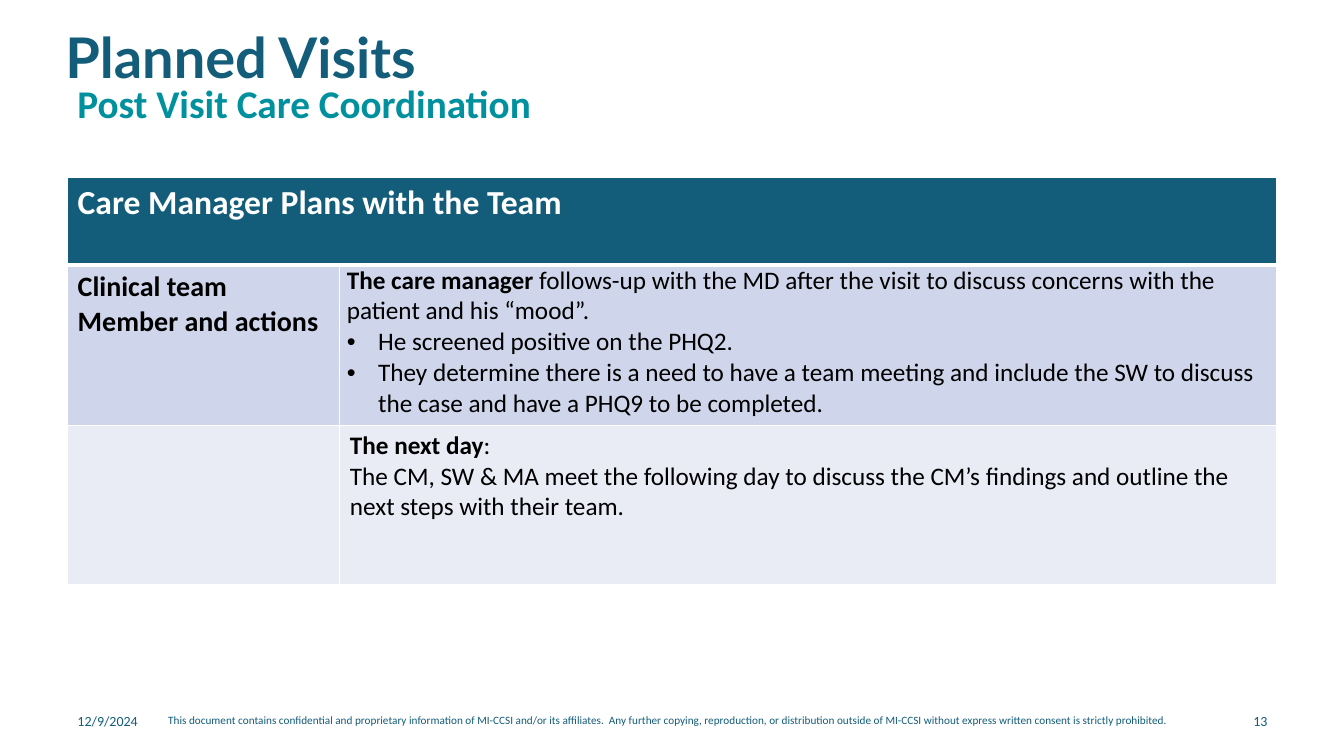
from dataclasses import dataclass

from lxml.etree import SubElement
from pptx import Presentation
from pptx.dml.color import RGBColor
from pptx.enum.text import MSO_ANCHOR, PP_ALIGN
from pptx.oxml.ns import qn
from pptx.slide import Slide
from pptx.table import _Cell
from pptx.text.text import TextFrame, _Paragraph
from pptx.util import Inches, Pt

NAVY, TEAL, WHITE, BLACK = "135D7A", "00909E", "FFFFFF", "000000"
BAND_DARK, BAND_LIGHT = "CFD5EA", "E9EBF5"
WIDTH, HEIGHT = Inches(13.33), Inches(7.5)


@dataclass
class Span:
    text: str
    size: float = 18
    color: str = BLACK
    bold: bool = False
    font: str = "Calibri"


@dataclass
class Para:
    spans: list[Span]
    bullet: bool = False
    align: PP_ALIGN = PP_ALIGN.LEFT
    line_spacing: float = 1.0


@dataclass
class Label:
    """A text box; its place is in percent of the slide's width and height."""
    left: float
    top: float
    width: float
    height: float
    para: Para
    anchor: MSO_ANCHOR = MSO_ANCHOR.TOP


@dataclass
class CellContent:
    row: int
    column: int
    fill: str
    paras: list[Para]
    tight: bool = False


LABELS = [
    Label(4.13, 3.33, 88.15, 8.27,
          Para([Span("Planned Visits", 40, NAVY, True, "Lato")], line_spacing=0.9)),
    Label(5.03, 92.67, 7.58, 5.33, Para([Span("12/9/2024", 10, NAVY)]), MSO_ANCHOR.MIDDLE),
    Label(87.47, 92.67, 7.58, 5.33,
          Para([Span("13", 10, NAVY)], align=PP_ALIGN.RIGHT), MSO_ANCHOR.MIDDLE),
    Label(11.78, 93.73, 76.52, 4.27, Para([Span(
        "This document contains confidential and proprietary information of MI-CCSI and/or its "
        "affiliates.  Any further copying, reproduction, or distribution outside of MI-CCSI "
        "without express written consent is strictly prohibited.", 8, NAVY)])),
    Label(5.03, 5.47, 87.47, 12,
          Para([Span("Post Visit Care Coordination", 28, TEAL, True)], line_spacing=0.9),
          MSO_ANCHOR.BOTTOM),
]

TABLE_LEFT, TABLE_TOP = 5.03, 23.47
COLUMN_SHARES = [20.26, 69.69]
ROW_SHARES = [11.6, 21.2, 21.07]
CELLS = [
    CellContent(0, 0, NAVY, [Para([Span("Care Manager Plans with the Team", 24, WHITE, True)])]),
    CellContent(0, 1, NAVY, []),
    CellContent(1, 0, BAND_DARK,
                [Para([Span("Clinical team Member and actions", 20, bold=True)])]),
    CellContent(1, 1, BAND_DARK, [
        Para([Span("The care manager ", bold=True),
              Span("follows-up with the MD after the visit to discuss concerns with the "
                   "patient and his “mood”.")]),
        Para([Span("He screened positive on the PHQ2.")], bullet=True),
        Para([Span("They determine there is a need to have a team meeting and include the SW "
                   "to discuss the case and have a PHQ9 to be completed.")], bullet=True),
    ], tight=True),
    CellContent(2, 0, BAND_LIGHT, []),
    CellContent(2, 1, BAND_LIGHT, [
        Para([Span("The next day", bold=True), Span(":")]),
        Para([Span("The CM, SW & MA meet the following day to discuss the CM’s findings and "
                   "outline the next steps with their team.")]),
    ]),
]


def across(percent: float) -> int:
    return round(WIDTH * percent / 100)


def down(percent: float) -> int:
    return round(HEIGHT * percent / 100)


def rgb(color: str) -> RGBColor:
    return RGBColor.from_string(color)


def add_bullet(paragraph: _Paragraph) -> None:
    properties = paragraph._p.get_or_add_pPr()
    indent = Inches(0.31)
    properties.set("marL", str(indent))
    properties.set("indent", str(-indent))
    SubElement(properties, qn("a:buFont"), typeface="Arial")
    SubElement(properties, qn("a:buChar"), char="•")


def write(frame: TextFrame, paras: list[Para]) -> None:
    for index, para in enumerate(paras):
        paragraph = frame.add_paragraph() if index else frame.paragraphs[0]
        paragraph.alignment = para.align
        paragraph.line_spacing = para.line_spacing
        if para.bullet:
            add_bullet(paragraph)
        for span in para.spans:
            run = paragraph.add_run()
            run.text = span.text
            run.font.name = span.font
            run.font.size = Pt(span.size)
            run.font.bold = span.bold
            run.font.color.rgb = rgb(span.color)


def add_label(page: Slide, label: Label) -> None:
    box = page.shapes.add_textbox(across(label.left), down(label.top),
                                  across(label.width), down(label.height))
    frame = box.text_frame
    frame.word_wrap = True
    frame.vertical_anchor = label.anchor
    write(frame, [label.para])


def add_borders(cell: _Cell, row: int) -> None:
    """White lines, thicker between the header and the rows below it."""
    properties = cell._tc.get_or_add_tcPr()
    widths = {"L": 1, "R": 1, "T": 3 if row == 1 else 1, "B": 3 if row == 0 else 1}
    for side, width in widths.items():
        line = SubElement(properties, qn(f"a:ln{side}"), w=str(Pt(width)))
        fill = SubElement(line, qn("a:solidFill"))
        SubElement(fill, qn("a:srgbClr"), val=WHITE)


def add_plan_table(page: Slide) -> None:
    table = page.shapes.add_table(
        len(ROW_SHARES), len(COLUMN_SHARES), across(TABLE_LEFT), down(TABLE_TOP),
        across(sum(COLUMN_SHARES)), down(sum(ROW_SHARES))).table
    for column, share in zip(table.columns, COLUMN_SHARES):
        column.width = across(share)
    for row, share in zip(table.rows, ROW_SHARES):
        row.height = down(share)
    for content in CELLS:
        cell = table.cell(content.row, content.column)
        add_borders(cell, content.row)
        cell.fill.solid()
        cell.fill.fore_color.rgb = rgb(content.fill)
        if content.tight:
            cell.margin_left = cell.margin_right = Inches(0.07)
            cell.margin_top = cell.margin_bottom = 0
        write(cell.text_frame, content.paras)
    table.cell(0, 0).merge(table.cell(0, 1))


def main() -> None:
    deck = Presentation()
    deck.slide_width, deck.slide_height = WIDTH, HEIGHT
    page = deck.slides.add_slide(deck.slide_layouts[6])
    for label in LABELS:
        add_label(page, label)
    add_plan_table(page)
    deck.save("out.pptx")


if __name__ == "__main__":
    main()
